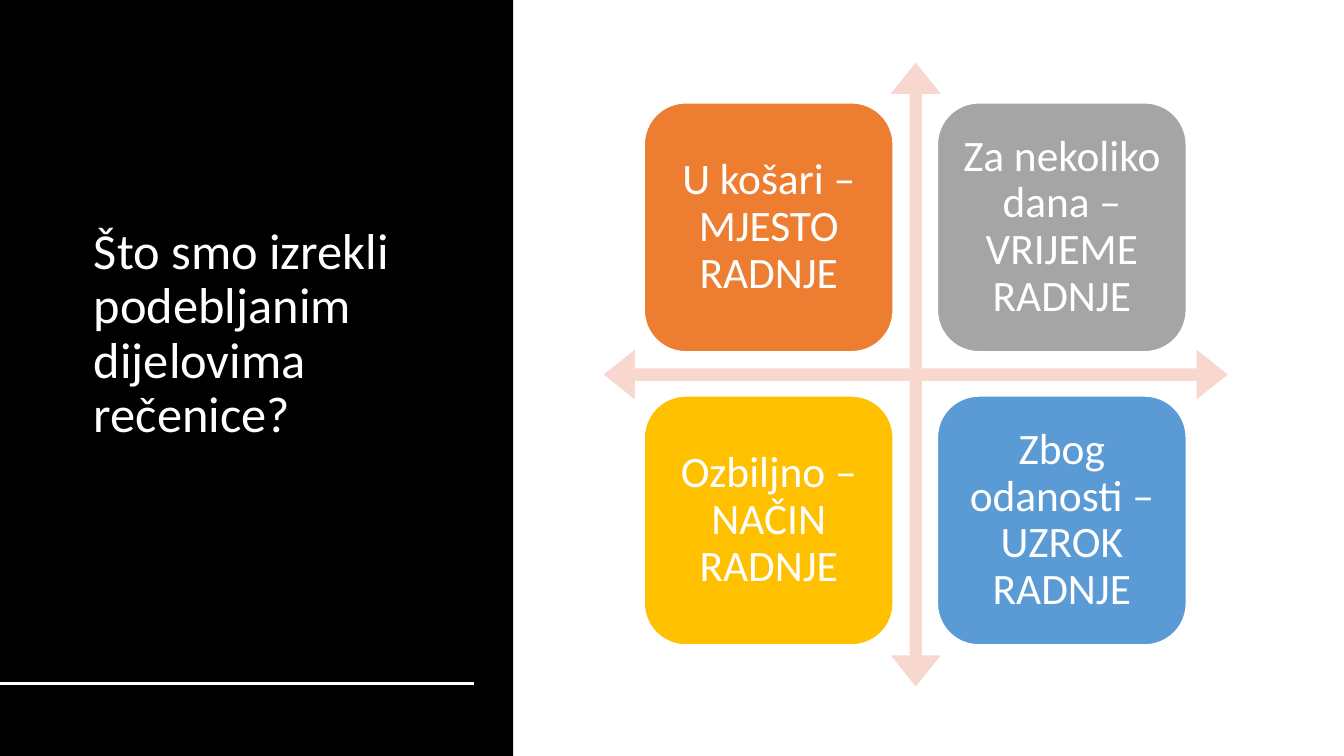
from lxml.etree import SubElement
from pptx import Presentation
from pptx.dml.color import RGBColor
from pptx.enum.shapes import MSO_CONNECTOR, MSO_SHAPE
from pptx.enum.text import MSO_ANCHOR, PP_ALIGN
from pptx.oxml.ns import qn
from pptx.util import Pt

WHITE = "FFFFFF"
TILES = [
    ("U košari – MJESTO RADNJE", "ED7D31"),
    ("Za nekoliko dana – VRIJEME RADNJE", "A5A5A5"),
    ("Ozbiljno – NAČIN RADNJE", "FFC000"),
    ("Zbog odanosti – UZROK RADNJE", "5B9BD5"),
]
TILE_LEFT, TILE_TOP, TILE_SIZE, TILE_STEP = 460.2, 73.5, 177.8, 209.4


def colour(value):
    return RGBColor.from_string(value)


def add_block(page, kind, left, top, width, height, fill, outline=None):
    block = page.shapes.add_shape(kind, Pt(left), Pt(top), Pt(width), Pt(height))
    block.shadow.inherit = False
    block.fill.solid()
    block.fill.fore_color.rgb = colour(fill)
    if outline:
        block.line.color.rgb = colour(outline)
        block.line.width = Pt(1)
    else:
        block.line.fill.background()
    return block


def write_text(shape, text, size, align):
    frame = shape.text_frame
    frame.word_wrap = True
    frame.vertical_anchor = MSO_ANCHOR.MIDDLE
    para = frame.paragraphs[0]
    para.alignment = align
    para.line_spacing = 0.9
    span = para.add_run()
    span.text = text
    span.font.name = "Calibri"
    span.font.size = Pt(size)
    span.font.color.rgb = colour(WHITE)


def add_title(page, text):
    box = page.shapes.add_textbox(Pt(60), Pt(44), Pt(281), Pt(390))
    write_text(box, text, 36, PP_ALIGN.LEFT)


def add_rule(page, left, right, top):
    rule = page.shapes.add_connector(
        MSO_CONNECTOR.STRAIGHT, Pt(left), Pt(top), Pt(right), Pt(top))
    rule.line.color.rgb = colour(WHITE)
    rule.line.width = Pt(2)
    SubElement(rule.element.spPr, qn("a:effectLst"))


def add_axes(page):
    axes = add_block(page, MSO_SHAPE.QUAD_ARROW, 431.3, 44.7, 445.7, 445.7, "F8D7CE")
    for index, value in enumerate((0.02, 0.04, 0.05)):
        axes.adjustments[index] = value


def add_tile(page, index, text, fill):
    row, column = divmod(index, 2)
    tile = add_block(
        page, MSO_SHAPE.ROUNDED_RECTANGLE,
        TILE_LEFT + column * TILE_STEP, TILE_TOP + row * TILE_STEP,
        TILE_SIZE, TILE_SIZE, fill, WHITE)
    frame = tile.text_frame
    frame.margin_left = frame.margin_right = Pt(9.3)
    frame.margin_top = frame.margin_bottom = Pt(9.3)
    write_text(tile, text, 31, PP_ALIGN.CENTER)


def main():
    deck = Presentation()
    deck.slide_width, deck.slide_height = Pt(960), Pt(540)
    page = deck.slides.add_slide(deck.slide_layouts[6])
    add_block(page, MSO_SHAPE.RECTANGLE, 0, 0, 366.5, 540, "000000")
    add_title(page, "Što smo izrekli podebljanim dijelovima rečenice?")
    add_rule(page, 0, 338.4, 488.2)
    add_axes(page)
    for index, (text, fill) in enumerate(TILES):
        add_tile(page, index, text, fill)
    deck.save("out.pptx")


if __name__ == "__main__":
    main()
